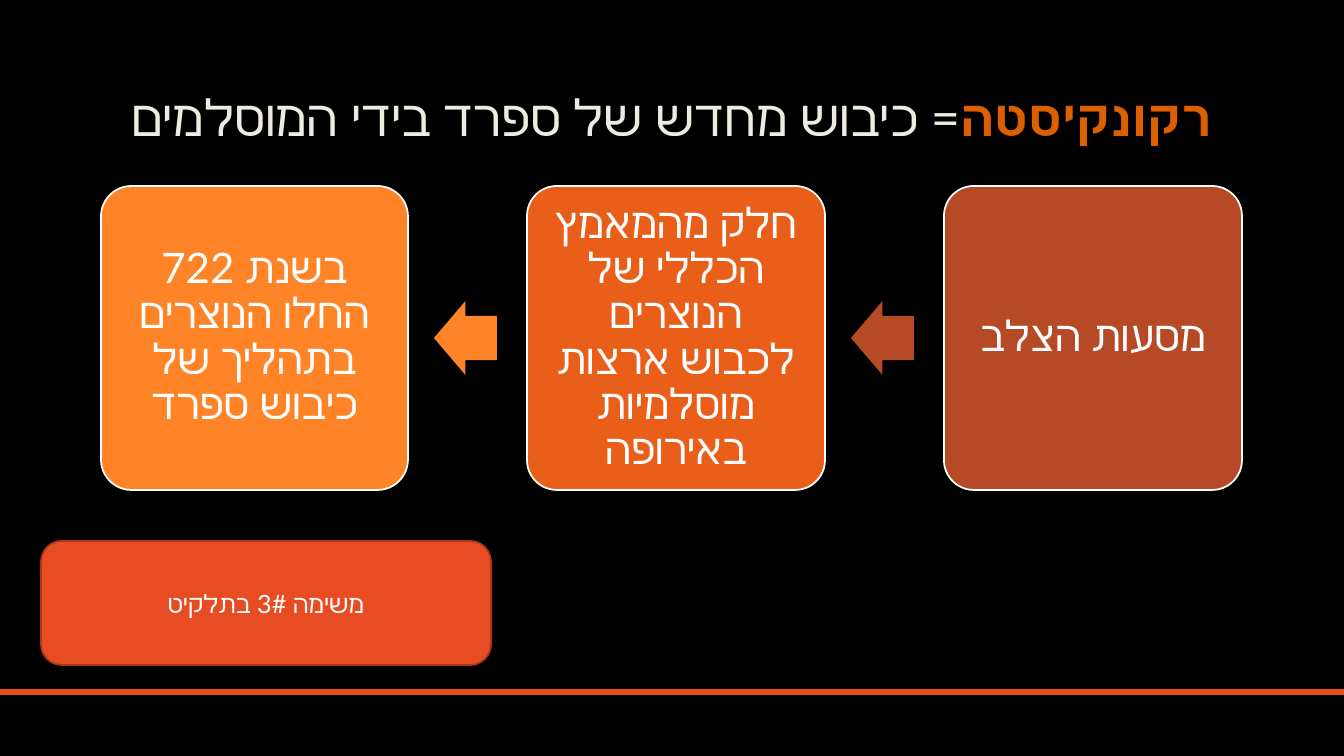
import pptx
import pptx.dml.color
import pptx.enum.shapes
import pptx.enum.text
import pptx.oxml.ns
import pptx.util
from lxml import etree

PX = 914400 / 100.8
FONT = "Lato"
SHAPES = pptx.enum.shapes.MSO_SHAPE
STEP_TOP, STEP_HEIGHT = 186, 304
ARROW_WIDTH, ARROW_HEIGHT = 63, 74

# left, width, colour, text; read from right to left
STEPS = [
    (944, 298, "B64926", "מסעות הצלב"),
    (527, 298, "E95E18", "חלק מהמאמץ הכללי של הנוצרים לכבוש ארצות מוסלמיות באירופה"),
    (101, 307, "FF8427", "בשנת 722 החלו הנוצרים בתהליך של כיבוש ספרד"),
]
# left, colour
ARROWS = [(851, "B64926"), (434, "FF8427")]


def px(length):
    return pptx.util.Emu(round(length * PX))


def colour(value):
    return pptx.dml.color.RGBColor.from_string(value)


def add_span(para, text, size=30, color="FFFFFF", bold=False):
    span = para.add_run()
    span.text = text
    span.font.name = FONT
    span.font.size = pptx.util.Pt(size)
    span.font.bold = bold
    span.font.color.rgb = colour(color)
    # Hebrew letters take the complex-script font
    script = etree.SubElement(span.font._element, pptx.oxml.ns.qn("a:cs"))
    script.set("typeface", FONT)


def center_para(frame, rtl=True, spacing=None):
    """Centre the frame's first paragraph both ways and return it."""
    frame.word_wrap = True
    frame.vertical_anchor = pptx.enum.text.MSO_ANCHOR.MIDDLE
    para = frame.paragraphs[0]
    para.alignment = pptx.enum.text.PP_ALIGN.CENTER
    para.line_spacing = spacing
    if rtl:
        para._p.get_or_add_pPr().set("rtl", "1")
    return para


def add_box(page, kind, left, top, width, height, fill, line=None):
    box = page.shapes.add_shape(kind, px(left), px(top), px(width), px(height))
    box.shadow.inherit = False
    box.fill.solid()
    box.fill.fore_color.rgb = colour(fill)
    if line:
        box.line.color.rgb = colour(line)
        box.line.width = pptx.util.Pt(1.25)
    else:
        box.line.fill.background()
    return box


def add_title(page):
    title = page.shapes.title
    title.left, title.top, title.width, title.height = map(px, (101, 67, 1141, 107))
    para = center_para(title.text_frame, spacing=0.9)
    add_span(para, "רקונקיסטה", size=36, color="DC5F00", bold=True)
    add_span(para, "= כיבוש מחדש של ספרד בידי המוסלמים", size=36, color="EEECE1")


def add_step(page, left, width, fill, text):
    box = add_box(page, SHAPES.ROUNDED_RECTANGLE, left, STEP_TOP, width, STEP_HEIGHT,
                  fill, line="FFFFFF")
    box.adjustments[0] = 0.1
    frame = box.text_frame
    frame.margin_left = frame.margin_right = px(12)
    frame.margin_top = frame.margin_bottom = px(12)
    add_span(center_para(frame, spacing=0.9), text)


def add_arrow(page, left, fill):
    top = STEP_TOP + (STEP_HEIGHT - ARROW_HEIGHT) / 2
    arrow = add_box(page, SHAPES.LEFT_ARROW, left, top, ARROW_WIDTH, ARROW_HEIGHT, fill)
    arrow.adjustments[0] = 0.6
    arrow.adjustments[1] = 0.5


def add_task(page):
    box = add_box(page, SHAPES.ROUNDED_RECTANGLE, 41, 541, 450, 124, "E84C22", line="AC3819")
    add_span(center_para(box.text_frame, rtl=False), "משימה 3# בתלקיט", size=18)


def main():
    deck = pptx.Presentation()
    deck.slide_width, deck.slide_height = px(1344), px(756)
    page = deck.slides.add_slide(deck.slide_layouts[5])
    page.background.fill.solid()
    page.background.fill.fore_color.rgb = colour("000000")

    add_box(page, SHAPES.RECTANGLE, 0, 689, 1344, 6, "E84C22")
    add_title(page)
    add_task(page)
    for step in STEPS:
        add_step(page, *step)
    for arrow in ARROWS:
        add_arrow(page, *arrow)
    deck.save("out.pptx")


if __name__ == "__main__":
    main()
